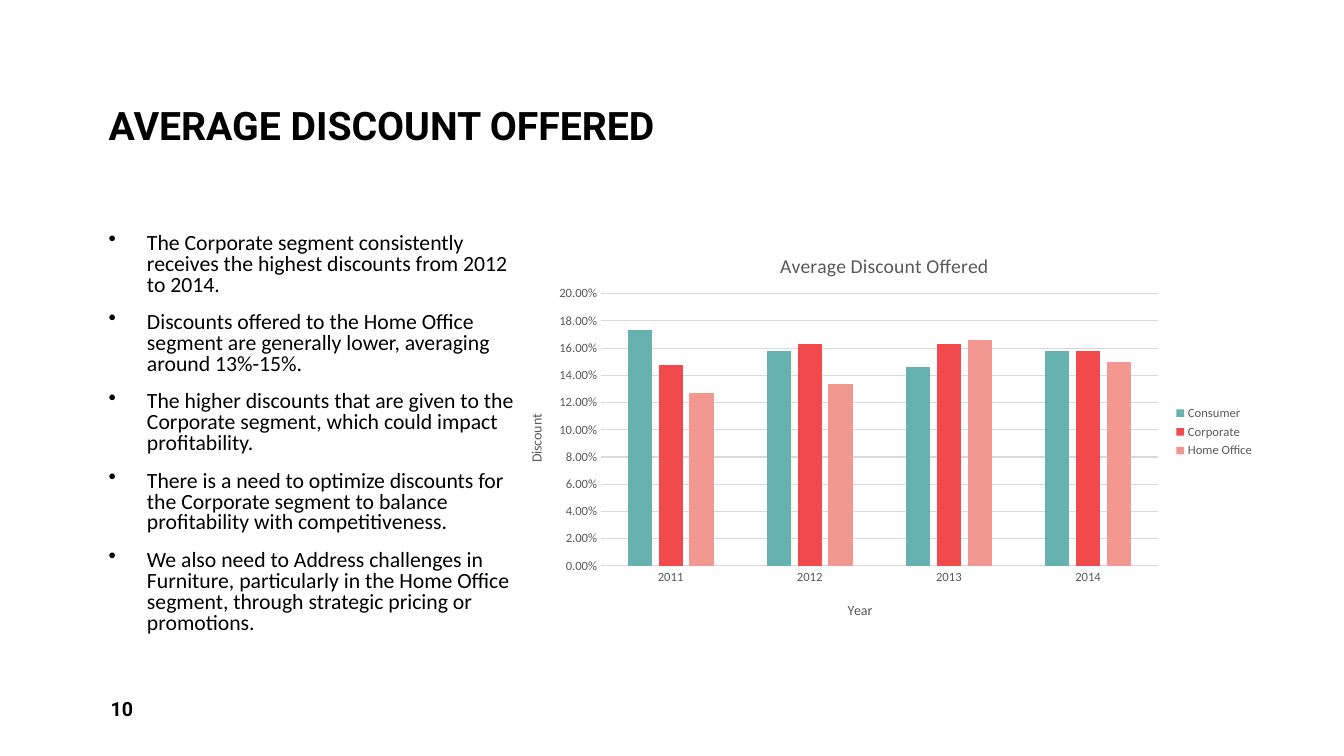
from lxml import etree
from pptx import Presentation
from pptx import util as u
from pptx.chart.data import CategoryChartData
from pptx.dml.color import RGBColor
from pptx.enum import chart as charts, text
from pptx.oxml import ns

BLACK = RGBColor(0x00, 0x00, 0x00)
GRAY = RGBColor(0x59, 0x59, 0x59)
LIGHT_GRAY = RGBColor(0xD9, 0xD9, 0xD9)
TEAL = RGBColor(0x66, 0xB2, 0xB0)
RED = RGBColor(0xF2, 0x49, 0x4C)
PINK = RGBColor(0xF3, 0x98, 0x91)

YEARS = ["2011", "2012", "2013", "2014"]
DISCOUNTS = [
    ("Consumer", TEAL, [0.173, 0.158, 0.146, 0.158]),
    ("Corporate", RED, [0.148, 0.163, 0.163, 0.158]),
    ("Home Office", PINK, [0.127, 0.134, 0.166, 0.15]),
]
FINDINGS = [
    "The Corporate segment consistently receives the highest discounts from 2012 to 2014.",
    "Discounts offered to the Home Office segment are generally lower, averaging around 13%-15%.",
    "The higher discounts that are given to the Corporate segment, which could impact profitability.",
    "There is a need to optimize discounts for the Corporate segment to balance profitability "
    "with competitiveness.",
    "We also need to Address challenges in Furniture, particularly in the Home Office segment, "
    "through strategic pricing or promotions.",
]


def set_font(font, name, size, color, bold=False):
    font.name, font.size, font.bold = name, u.Pt(size), bold
    font.color.rgb = color


def place(element, **shares):
    """Fix a chart part at shares of the chart's width and height."""
    layout = element.find(ns.qn("c:layout"))
    if layout is None:
        layout = etree.Element(ns.qn("c:layout"))
        element.insert(0, layout)
    manual = etree.SubElement(layout, ns.qn("c:manualLayout"))
    if "w" in shares:
        etree.SubElement(manual, ns.qn("c:layoutTarget"), val="inner")
    for mode in ("xMode", "yMode"):
        etree.SubElement(manual, ns.qn(f"c:{mode}"), val="edge")
    for side, share in shares.items():
        etree.SubElement(manual, ns.qn(f"c:{side}"), val=str(share))


class DiscountSlide:
    HEADING_FONT, BODY_FONT = "Roboto", "Calibri"
    COLUMNS, ROWS = 40, 30

    def __init__(self, presentation):
        self.slide = presentation.slides.add_slide(presentation.slide_layouts[6])
        self.column = presentation.slide_width / self.COLUMNS
        self.row = presentation.slide_height / self.ROWS

    def box(self, left, top, width, height):
        return (round(left * self.column), round(top * self.row),
                round(width * self.column), round(height * self.row))

    def text_frame(self, area, anchor):
        frame = self.slide.shapes.add_textbox(*self.box(*area)).text_frame
        frame.word_wrap = True
        frame.vertical_anchor = anchor
        return frame

    def heading(self, words, area, size, anchor, line_spacing=1.0):
        paragraph = self.text_frame(area, anchor).paragraphs[0]
        paragraph.text = words
        paragraph.line_spacing = line_spacing
        set_font(paragraph.font, self.HEADING_FONT, size, BLACK, bold=True)

    def bullets(self, items, area):
        frame = self.text_frame(area, text.MSO_ANCHOR.TOP)
        frame.text = "\n".join(items)
        for paragraph in frame.paragraphs:
            paragraph.line_spacing = 0.8
            paragraph.space_after = u.Pt(12)
            set_font(paragraph.font, self.BODY_FONT, 15.5, BLACK)
            properties = paragraph._p.get_or_add_pPr()
            indent = u.Inches(0.38)
            properties.set("marL", str(indent))
            properties.set("indent", str(-indent))
            bullet = etree.Element(ns.qn("a:buChar"), char="•")
            properties.find(ns.qn("a:defRPr")).addprevious(bullet)

    def chart_title(self, owner, words, size, x, y, rotation=0):
        title = owner.chart_title if hasattr(owner, "chart_title") else owner.axis_title
        frame = title.text_frame
        frame.text = words
        set_font(frame.paragraphs[0].font, self.BODY_FONT, size, GRAY)
        frame._txBody.bodyPr.set("rot", str(rotation * 60000))
        frame._txBody.bodyPr.set("vert", "horz")
        place(title._element, x=x, y=y)

    def column_chart(self, area):
        data = CategoryChartData(number_format="0.00%")
        data.categories = YEARS
        for name, _, values in DISCOUNTS:
            data.add_series(name, values)
        chart = self.slide.shapes.add_chart(
            charts.XL_CHART_TYPE.COLUMN_CLUSTERED, *self.box(*area), data).chart
        set_font(chart.font, self.BODY_FONT, 10, BLACK)

        # Columns
        plot = chart.plots[0]
        plot.gap_width, plot.overlap, plot.vary_by_categories = 219, -27, False
        for series, (_, color, _) in zip(plot.series, DISCOUNTS):
            series.format.fill.solid()
            series.format.fill.fore_color.rgb = color
        place(chart._chartSpace.chart.plotArea, x=0.13, y=0.16, w=0.73, h=0.67)

        # Axes
        years, discounts = chart.category_axis, chart.value_axis
        for axis in (years, discounts):
            axis.major_tick_mark = axis.minor_tick_mark = charts.XL_TICK_MARK.NONE
            set_font(axis.tick_labels.font, self.BODY_FONT, 9, GRAY)
        discounts.minimum_scale, discounts.maximum_scale = 0, 0.2
        discounts.major_unit = 0.02
        discounts.tick_labels.number_format = "0.00%"
        discounts.tick_labels.number_format_is_linked = False
        discounts.format.line.fill.background()
        for line in (years.format.line, discounts.major_gridlines.format.line):
            line.color.rgb = LIGHT_GRAY
            line.width = u.Pt(0.75)

        # Titles and legend
        self.chart_title(chart, "Average Discount Offered", 14, 0.36, 0.05)
        self.chart_title(years, "Year", 10, 0.45, 0.91)
        self.chart_title(discounts, "Discount", 10, 0.03, 0.45, rotation=-90)
        chart.has_legend = True
        chart.legend.position = charts.XL_LEGEND_POSITION.RIGHT
        chart.legend.include_in_layout = False
        set_font(chart.legend.font, self.BODY_FONT, 9, GRAY)


def main():
    presentation = Presentation()
    presentation.slide_width, presentation.slide_height = u.Inches(13.33), u.Inches(7.5)
    page = DiscountSlide(presentation)

    # Title
    page.heading("AVERAGE DISCOUNT OFFERED", (2.94, 0.32, 34.15, 5.8), 28,
                 text.MSO_ANCHOR.BOTTOM, line_spacing=0.9)
    # Findings beside the chart
    page.bullets(FINDINGS, (2.94, 9.08, 12.66, 18.24))
    page.column_chart((14.94, 9.08, 22.69, 16.12))
    # Page number
    page.heading("10", (3, 27.32, 8.76, 1.6), 14, text.MSO_ANCHOR.MIDDLE)

    presentation.save("out.pptx")


if __name__ == "__main__":
    main()
